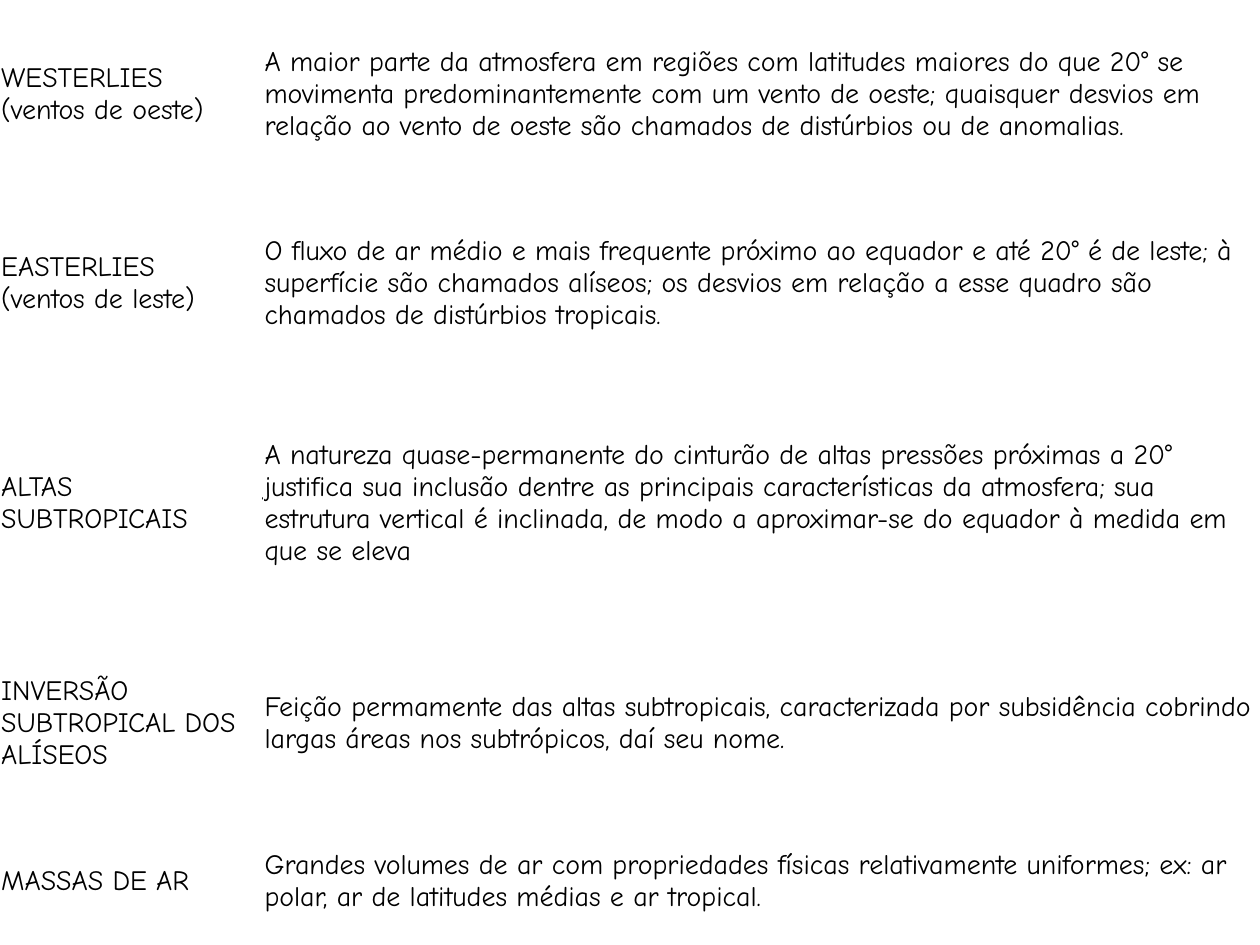
from dataclasses import dataclass

from pptx import Presentation
from pptx import util as u
from pptx.dml import color
from pptx.enum import text


@dataclass(frozen=True)
class Concept:
    term: str
    definition: str
    height: float


CONCEPTS = [
    Concept(
        "WESTERLIES\n(ventos de oeste)",
        "A maior parte da atmosfera em regiões com latitudes maiores do que 20° se "
        "movimenta predominantemente com um vento de oeste; quaisquer desvios em "
        "relação ao vento de oeste são chamados de distúrbios ou de anomalias.",
        108,
    ),
    Concept(
        "EASTERLIES\n(ventos de leste)",
        "O fluxo de ar médio e mais frequente próximo ao equador e até 20° é de leste; "
        "à superfície são chamados alíseos; os desvios em relação a esse quadro são "
        "chamados de distúrbios tropicais.",
        108,
    ),
    Concept(
        "ALTAS SUBTROPICAIS",
        "A natureza quase-permanente do cinturão de altas pressões próximas a 20° "
        "justifica sua inclusão dentre as principais características da atmosfera; sua "
        "estrutura vertical é inclinada, de modo a aproximar-se do equador à medida em "
        "que se eleva",
        143.28,
    ),
    Concept(
        "INVERSÃO SUBTROPICAL DOS ALÍSEOS",
        "Feição permamente das altas subtropicais, caracterizada por subsidência "
        "cobrindo largas áreas nos subtrópicos, daí seu nome.",
        108,
    ),
    Concept(
        "MASSAS DE AR",
        "Grandes volumes de ar com propriedades físicas relativamente uniformes; ex: ar "
        "polar, ar de latitudes médias e ar tropical.",
        72.72,
    ),
]

SLIDE_WIDTH, SLIDE_HEIGHT = 720, 540
TERM_WIDTH = 150.48
COLUMN_WIDTHS = [TERM_WIDTH, SLIDE_WIDTH - TERM_WIDTH]
CELL_FORMAT = {
    "vertical_anchor": text.MSO_ANCHOR.MIDDLE,
    **{f"margin_{side}": u.Pt(0.72) for side in ("left", "right", "top", "bottom")},
}
FONT_FORMAT = {"name": "Comic Neue", "size": u.Pt(16), "bold": False}
TABLE_FORMAT = {"first_row": False, "horz_banding": False}


def apply_format(target: object, values: dict) -> None:
    for name, value in values.items():
        setattr(target, name, value)


def set_color(target, hex_value: str) -> None:
    target.rgb = color.RGBColor.from_string(hex_value)


def write_cell(cell, content: str) -> None:
    apply_format(cell, CELL_FORMAT)
    cell.fill.background()
    cell.text_frame.text = content
    for para in cell.text_frame.paragraphs:
        for span in para.runs:
            apply_format(span.font, FONT_FORMAT)
            set_color(span.font.color, "000000")


def draw_glossary(page, concepts: list[Concept]) -> None:
    frame = page.shapes.add_table(
        len(concepts), len(COLUMN_WIDTHS), u.Pt(0), u.Pt(0), u.Pt(SLIDE_WIDTH), u.Pt(SLIDE_HEIGHT)
    )
    table = frame.table
    apply_format(table, TABLE_FORMAT)
    for column, width in zip(table.columns, COLUMN_WIDTHS):
        column.width = u.Pt(width)
    for row, concept in zip(table.rows, concepts):
        row.height = u.Pt(concept.height)
        for cell, content in zip(row.cells, (concept.term, concept.definition)):
            write_cell(cell, content)


def main() -> None:
    deck = Presentation()
    apply_format(deck, {"slide_width": u.Pt(SLIDE_WIDTH), "slide_height": u.Pt(SLIDE_HEIGHT)})
    page = deck.slides.add_slide(deck.slide_layouts[6])
    draw_glossary(page, CONCEPTS)
    deck.save("out.pptx")


if __name__ == "__main__":
    main()
